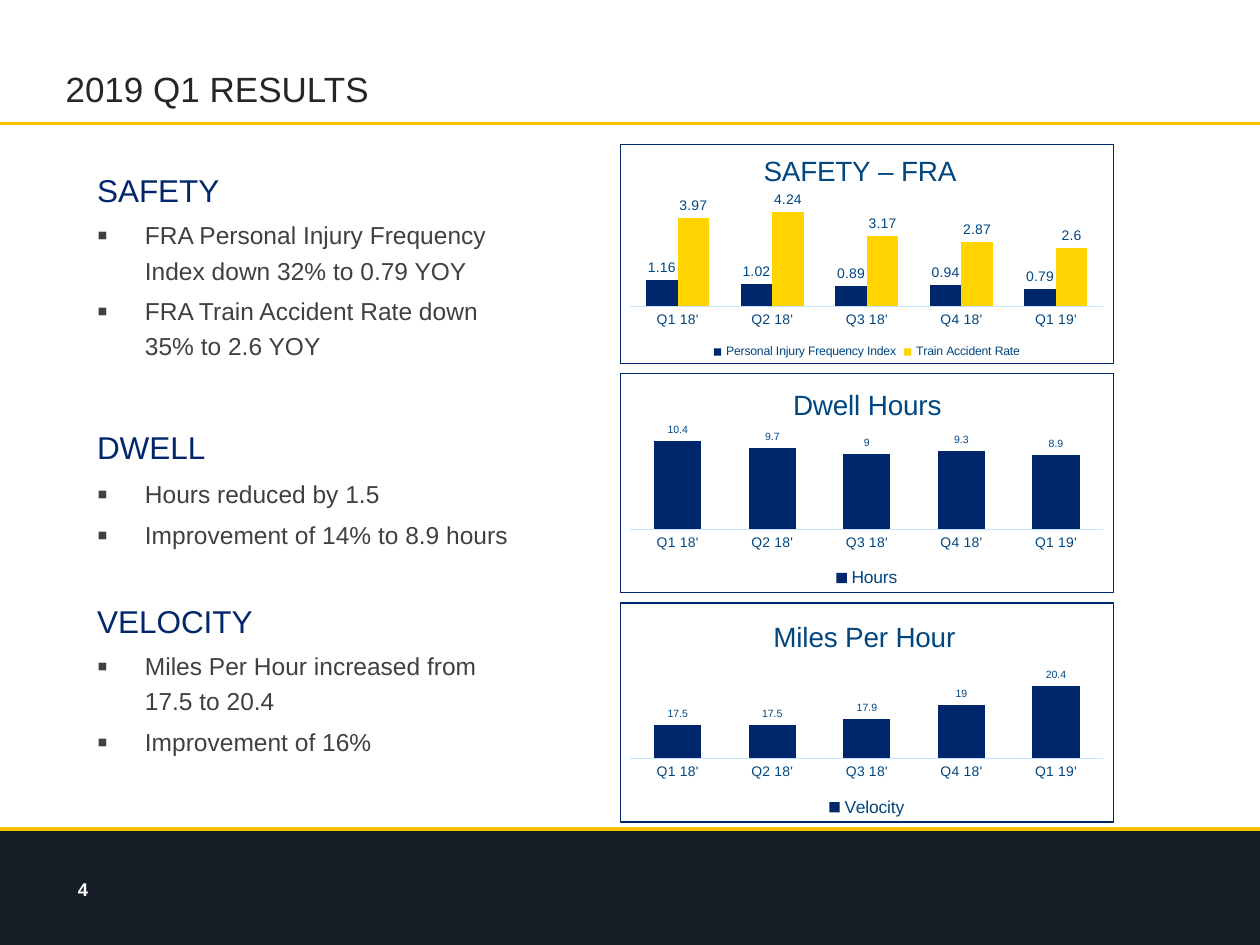
from dataclasses import dataclass
from typing import Optional

from lxml.etree import SubElement
from pptx import Presentation
from pptx.chart.chart import Chart
from pptx.chart.data import CategoryChartData
from pptx.dml.color import RGBColor
from pptx.enum.chart import XL_CHART_TYPE, XL_LABEL_POSITION, XL_LEGEND_POSITION, XL_TICK_MARK
from pptx.enum.shapes import MSO_CONNECTOR, MSO_SHAPE
from pptx.enum.text import MSO_ANCHOR, MSO_AUTO_SIZE, PP_ALIGN
from pptx.oxml import parse_xml
from pptx.oxml.ns import nsdecls, qn
from pptx.util import Inches, Pt

FONT = "Arial"
NAVY = "00266B"
YELLOW = "FFD400"
GOLD = "FFC000"
CHART_TEXT = "00467F"
QUARTERS = ["Q1 18'", "Q2 18'", "Q3 18'", "Q4 18'", "Q1 19'"]


@dataclass
class Section:
    heading: str
    bullets: list[str]
    space_before: float
    first_bullet_space: float = 3


@dataclass
class Series:
    name: str
    values: list[float]
    color: str = NAVY


@dataclass
class ColumnChart:
    title: str
    series: list[Series]
    minimum: float
    maximum: float
    title_position: tuple[float, float]
    plot_top: float
    plot_height: float
    label_size: float = 6
    legend_size: float = 10
    overlap: int = -27


SECTIONS = [
    Section("SAFETY", ["FRA Personal Injury Frequency Index down 32% to 0.79 YOY",
                       "FRA Train Accident Rate down 35% to 2.6 YOY"], 0),
    Section("DWELL", ["Hours reduced by 1.5", "Improvement of 14% to 8.9 hours"], 34, 4.5),
    Section("VELOCITY", ["Miles Per Hour increased from 17.5 to 20.4", "Improvement of 16%"], 26),
]

CHARTS = [
    ColumnChart("SAFETY – FRA",
                [Series("Personal Injury Frequency Index", [1.16, 1.02, 0.89, 0.94, 0.79]),
                 Series("Train Accident Rate", [3.97, 4.24, 3.17, 2.87, 2.6], YELLOW)],
                0, 5, (0.28, 0.02), 0.23, 0.51, 8, 7, 0),
    ColumnChart("Dwell Hours", [Series("Hours", [10.4, 9.7, 9, 9.3, 8.9])],
                1, 12, (0.34, 0.04), 0.24, 0.47),
    ColumnChart("Miles Per Hour", [Series("Velocity", [17.5, 17.5, 17.9, 19, 20.4])],
                15, 22, (0.3, 0.05), 0.28, 0.43),
]


def rgb(color: str) -> RGBColor:
    return RGBColor.from_string(color)


def format_font(font, size: float, color: str, bold: Optional[bool] = False) -> None:
    font.name = FONT
    font.size = Pt(size)
    font.bold = bold
    font.color.rgb = rgb(color)


def place(shape, left: float, top: float, width: float, height: float) -> None:
    shape.left, shape.top = Inches(left), Inches(top)
    shape.width, shape.height = Inches(width), Inches(height)


def add_rule(slide, top: float, weight: float) -> None:
    rule = slide.shapes.add_connector(
        MSO_CONNECTOR.STRAIGHT, Inches(0), Inches(top), Inches(10), Inches(top))
    rule.line.color.rgb = rgb(GOLD)
    rule.line.width = Pt(weight)
    SubElement(rule.element.spPr, qn("a:effectLst"))


def add_frame(slide) -> None:
    footer = slide.shapes.add_shape(
        MSO_SHAPE.RECTANGLE, Inches(0), Inches(6.58), Inches(10), Inches(0.92))
    footer.shadow.inherit = False
    footer.fill.solid()
    footer.fill.fore_color.rgb = rgb("161F28")
    footer.line.fill.background()
    add_rule(slide, 0.98, 2.25)
    add_rule(slide, 6.58, 2.75)
    number = slide.shapes.add_textbox(Inches(0.52), Inches(6.93), Inches(0.67), Inches(0.25))
    number.text_frame.word_wrap = True
    number.text_frame.vertical_anchor = MSO_ANCHOR.MIDDLE
    paragraph = number.text_frame.paragraphs[0]
    paragraph.text = "4"
    format_font(paragraph.font, 10.5, "FFFFFF", True)


def fill_title(title) -> None:
    place(title, 0.42, 0.15, 9, 1.1)
    title.text_frame.auto_size = MSO_AUTO_SIZE.NONE
    title.text_frame.vertical_anchor = MSO_ANCHOR.MIDDLE
    paragraph = title.text_frame.paragraphs[0]
    paragraph.text = "2019 Q1 RESULTS"
    paragraph.alignment = PP_ALIGN.LEFT
    format_font(paragraph.font, 20, "262626")


def write_line(paragraph, text: str, space_before: float, bullet: bool) -> None:
    paragraph.text = text
    properties = paragraph._p.get_or_add_pPr()
    indent = Inches(0.38) if bullet else 0
    properties.set("marL", str(indent))
    properties.set("indent", str(-indent))
    if bullet:
        SubElement(properties, qn("a:buSzPct"), val="125000")
        SubElement(properties, qn("a:buFont"), typeface=FONT)
        SubElement(properties, qn("a:buChar"), char="▪")
        format_font(paragraph.font, 14, "404040")
    else:
        SubElement(properties, qn("a:buNone"))
        format_font(paragraph.font, 18, NAVY)
    paragraph.line_spacing = 1.2
    paragraph.space_before = Pt(space_before)


def fill_body(body) -> None:
    place(body, 0.67, 1.25, 3.58, 4.83)
    frame = body.text_frame
    frame.auto_size = MSO_AUTO_SIZE.NONE
    for index, section in enumerate(SECTIONS):
        heading = frame.add_paragraph() if index else frame.paragraphs[0]
        write_line(heading, section.heading, section.space_before, False)
        for position, bullet in enumerate(section.bullets):
            space = 3 if position else section.first_bullet_space
            write_line(frame.add_paragraph(), bullet, space, True)


def set_layout(parent, index: int, **settings) -> None:
    for existing in parent.findall(qn("c:layout")):
        parent.remove(existing)
    layout = parse_xml(f"<c:layout {nsdecls('c')}><c:manualLayout/></c:layout>")
    for name, value in settings.items():
        SubElement(layout[0], qn(f"c:{name}"), val=str(value))
    parent.insert(index, layout)


def add_border(chart: Chart) -> None:
    border = parse_xml(
        f"<c:spPr {nsdecls('c', 'a')}><a:noFill/><a:ln w='{Pt(0.75)}'><a:solidFill>"
        f"<a:srgbClr val='{NAVY}'/></a:solidFill></a:ln></c:spPr>")
    chart.element.find(qn("c:chart")).addnext(border)


def add_column_chart(slide, details: ColumnChart, top: float) -> None:
    data = CategoryChartData()
    data.categories = QUARTERS
    for series in details.series:
        data.add_series(series.name, series.values)
    chart = slide.shapes.add_chart(
        XL_CHART_TYPE.COLUMN_CLUSTERED, Inches(4.92), Inches(top),
        Inches(3.92), Inches(1.75), data).chart
    format_font(chart.font, 10, CHART_TEXT)
    add_border(chart)

    title = chart.chart_title.text_frame.paragraphs[0]
    title.text = details.title
    format_font(title.font, 16, CHART_TEXT)
    left, title_top = details.title_position
    set_layout(chart.element.find(f".//{qn('c:title')}"), 1,
               xMode="edge", yMode="edge", x=left, y=title_top)
    set_layout(chart.element.find(f".//{qn('c:plotArea')}"), 0,
               layoutTarget="inner", xMode="edge", yMode="edge",
               x=0.02, y=details.plot_top, w=0.96, h=details.plot_height)

    chart.has_legend = True
    chart.legend.position = XL_LEGEND_POSITION.BOTTOM
    chart.legend.include_in_layout = False
    format_font(chart.legend.font, details.legend_size, CHART_TEXT)

    chart.value_axis.visible = False
    chart.value_axis.has_major_gridlines = False
    chart.value_axis.minimum_scale = details.minimum
    chart.value_axis.maximum_scale = details.maximum
    chart.category_axis.major_tick_mark = XL_TICK_MARK.NONE
    chart.category_axis.format.line.color.rgb = rgb("C6E5FF")
    chart.category_axis.format.line.width = Pt(0.75)
    format_font(chart.category_axis.tick_labels.font, 8, CHART_TEXT)

    plot = chart.plots[0]
    plot.vary_by_categories = False
    plot.gap_width = 100
    plot.overlap = details.overlap
    for column, series in zip(plot.series, details.series):
        column.invert_if_negative = False
        column.format.fill.solid()
        column.format.fill.fore_color.rgb = rgb(series.color)
        labels = column.data_labels
        labels.show_value = True
        labels.position = XL_LABEL_POSITION.OUTSIDE_END
        format_font(labels.font, details.label_size, CHART_TEXT)


def main() -> None:
    presentation = Presentation()
    presentation.slide_width, presentation.slide_height = Inches(10), Inches(7.5)
    slide = presentation.slides.add_slide(presentation.slide_layouts[1])
    add_frame(slide)
    fill_title(slide.shapes.title)
    fill_body(slide.placeholders[1])
    for index, details in enumerate(CHARTS):
        add_column_chart(slide, details, 1.14 + 1.82 * index)
    presentation.save("out.pptx")


if __name__ == "__main__":
    main()
